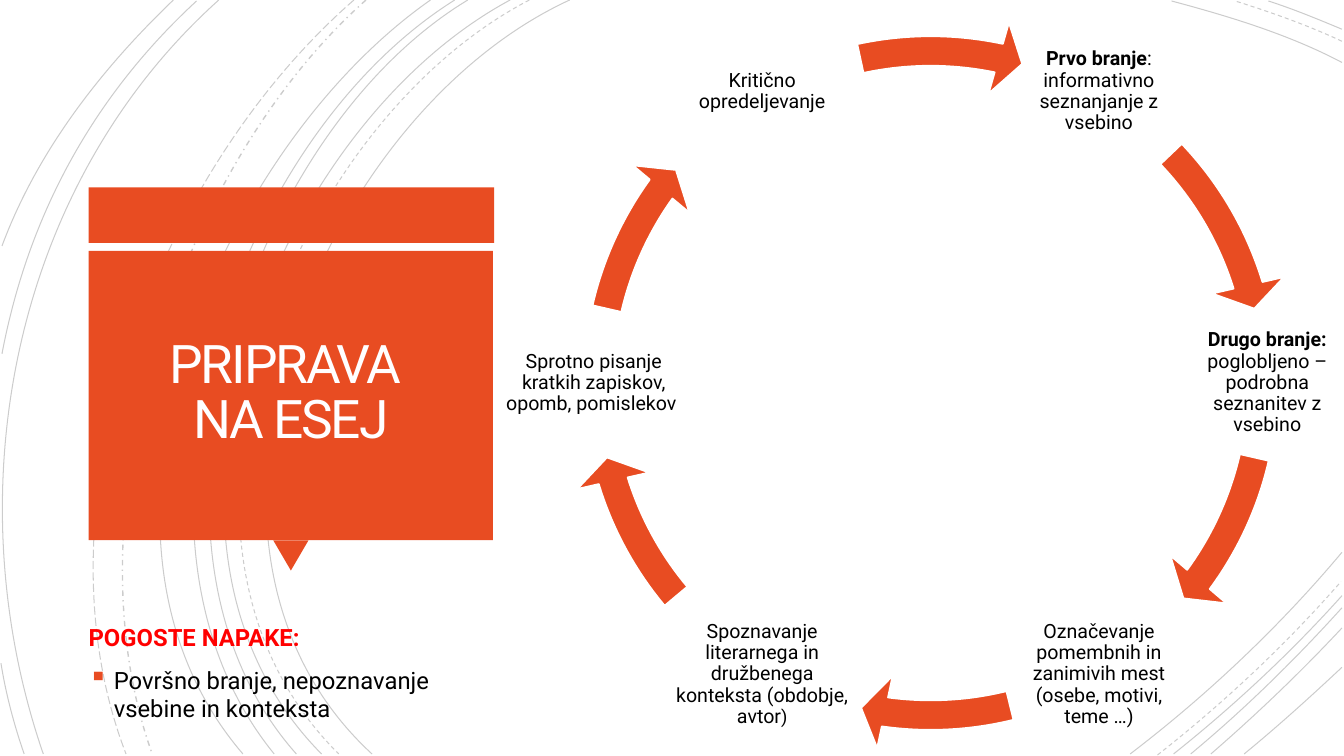
import math
from dataclasses import dataclass

from lxml import etree
from pptx import Presentation
from pptx import util as u
from pptx.dml.color import RGBColor
from pptx.enum import dml, shapes, text
from pptx.oxml import ns


@dataclass(frozen=True)
class Theme:
    font: str = "Roboto"
    accent: RGBColor = RGBColor(0xE8, 0x4C, 0x22)
    ink: RGBColor = RGBColor(0, 0, 0)
    paper: RGBColor = RGBColor(0xFF, 0xFF, 0xFF)
    title: RGBColor = RGBColor(0xFF, 0xFE, 0xFF)
    alert: RGBColor = RGBColor(0xFF, 0, 0)
    title_size: float = 38
    note_size: float = 17
    step_size: float = 14
    bracket_size: float = 13


@dataclass(frozen=True)
class Arc:
    """A cubic curve: start, two controls, end, in inches."""
    points: tuple
    dash: str = "SOLID"
    width: float = 0.75


@dataclass(frozen=True)
class Span:
    words: str
    size: float
    color: RGBColor
    bold: bool = False


@dataclass(frozen=True)
class Step:
    """A label on the ring; the arrow after it runs between two angles."""
    spans: tuple
    width: float
    arrow_start: float
    arrow_end: float


THEME = Theme()
RING_X, RING_Y, RING_RADIUS, ARROW_BOX = 9.23, 3.8, 3.34, 7.32
STEP_HEIGHT = 1.5

ARCS = [
    Arc(((5.65, 0), (3.15, 1.15), (1.43, 5.4), (3.69, 7.48))),
    Arc(((13.31, 0.62), (12.78, 0.34), (12.18, 0.16), (11.62, 0.01))),
    Arc(((11.21, 7.48), (11.97, 6.9), (12.69, 6.22), (13.31, 5.48))),
    Arc(((5.25, 0), (2.85, 1.25), (1.23, 5.37), (3.36, 7.48)), "DASH"),
    Arc(((13.31, 0.41), (12.97, 0.25), (12.6, 0.12), (12.25, 0.01)), "DASH"),
    Arc(((11.48, 7.49), (12.13, 6.98), (12.75, 6.4), (13.3, 5.77)), "DASH"),
    Arc(((5.06, 0), (2.7, 1.27), (1.1, 5.37), (3.19, 7.48))),
    Arc(((13.31, 0.29), (13.07, 0.19), (12.83, 0.09), (12.58, 0.01))),
    Arc(((11.64, 7.48), (12.23, 7.01), (12.8, 6.48), (13.31, 5.91))),
    Arc(((4.64, 0), (2.44, 1.33), (1.1, 5.41), (2.94, 7.48))),
    Arc(((11.81, 7.48), (12.34, 7.04), (12.84, 6.55), (13.31, 6.03))),
    Arc(((4.51, 0), (2.31, 1.38), (0.97, 5.33), (2.72, 7.48))),
    Arc(((12.01, 7.48), (12.46, 7.09), (12.9, 6.67), (13.31, 6.23))),
    Arc(((4.27, 0), (2.17, 1.47), (0.53, 5.29), (2.41, 7.48))),
    Arc(((12.34, 7.48), (12.67, 7.21), (12.99, 6.92), (13.31, 6.62))),
    Arc(((3.63, 0), (1.76, 1.66), (0.65, 5.09), (1.51, 7.48)), "DASH_DOT", 1),
    Arc(((3.51, 0), (1.57, 1.69), (0.29, 4.99), (1.25, 7.48)), "LONG_DASH"),
    Arc(((2.17, 0), (0.11, 1.85), (-0.46, 4.9), (0.43, 7.48))),
    Arc(((1.95, 0.01), (0.92, 0.96), (0.28, 2.14), (0.02, 3.51))),
    Arc(((0.01, 6.58), (0.06, 6.89), (0.14, 7.19), (0.24, 7.48))),
    Arc(((1.72, 0), (1, 0.69), (0.37, 1.5), (0.02, 2.44))),
]


def step_span(words: str, bold: bool = False, size: float = THEME.step_size) -> Span:
    return Span(words, size, THEME.ink, bold)


STEPS = [
    Step((step_span("Prvo branje", True),
          step_span(": informativno seznanjanje z vsebino")), 1.5, 316.39, 342.88),
    Step((step_span("Drugo branje: ", True),
          step_span("poglobljeno – podrobna seznanitev z vsebino")), 1.5, 12.95, 36.26),
    Step((step_span("Označevanje pomembnih in zanimivih mest (osebe, motivi, teme …)"),),
         1.75, 76.18, 97.91),
    Step((step_span("Spoznavanje literarnega in družbenega konteksta (obdobje, avtor"),
          step_span(")", size=THEME.bracket_size)), 1.94, 140.06, 162.88),
    Step((step_span("Sprotno pisanje kratkih zapiskov, opomb, pomislekov "),),
         1.97, 192.95, 215.76),
    Step((step_span("Kritično opredeljevanje"),), 1.93, 257.79, 281.84),
]


def apply(target, values: dict) -> None:
    for name, value in values.items():
        setattr(target, name, value)


def add_arc(page, arc: Arc) -> None:
    start, *rest = [(u.Inches(x), u.Inches(y)) for x, y in arc.points]
    builder = page.shapes.build_freeform(*start)
    builder.add_line_segments(rest, close=False)
    curve = builder.convert_to_shape()
    curve.shadow.inherit = False
    curve.fill.background()
    curve.line.color.rgb = THEME.ink
    apply(curve.line, {"width": u.Pt(arc.width),
                       "dash_style": getattr(dml.MSO_LINE, arc.dash)})
    color = curve.line._ln.find(".//" + ns.qn("a:srgbClr"))
    etree.SubElement(color, ns.qn("a:alpha"), val="20000")
    # The three straight segments become one cubic segment.
    outline = curve._element.find(".//" + ns.qn("a:path"))
    cubic = etree.SubElement(outline, ns.qn("a:cubicBezTo"))
    for segment in outline.findall(ns.qn("a:lnTo")):
        cubic.append(segment[0])
        outline.remove(segment)


def add_accent_shape(page, kind, left: float, top: float, width: float, height: float):
    shape = page.shapes.add_shape(kind, *map(u.Inches, (left, top, width, height)))
    shape.shadow.inherit = False
    shape.fill.solid()
    shape.fill.fore_color.rgb = THEME.accent
    shape.line.fill.background()
    return shape


def add_box(page, left: float, top: float, width: float, height: float,
            inset: float, anchor=text.MSO_ANCHOR.MIDDLE):
    box = page.shapes.add_textbox(*map(u.Inches, (left, top, width, height)))
    frame = box.text_frame
    apply(frame, {"word_wrap": True, "vertical_anchor": anchor})
    apply(frame, {f"margin_{side}": u.Inches(inset)
                  for side in ("left", "top", "right", "bottom")})
    return frame


def write(para, spans: tuple, **layout) -> None:
    apply(para, layout)
    for span in spans:
        run = para.add_run()
        run.text = span.words
        apply(run.font, {"name": THEME.font, "size": u.Pt(span.size), "bold": span.bold})
        run.font.color.rgb = span.color


def add_title(page) -> None:
    rect = shapes.MSO_SHAPE.RECTANGLE
    add_accent_shape(page, rect, 0.88, 1.86, 4.02, 0.55)
    pointer = add_accent_shape(page, shapes.MSO_SHAPE.ISOSCELES_TRIANGLE,
                               2.71, 5.36, 0.35, 0.3)
    pointer.rotation = 180
    add_accent_shape(page, rect, 0.88, 2.49, 4.01, 2.87)
    para = add_box(page, 0.97, 2.57, 3.83, 2.69, 0.25).paragraphs[0]
    first, second = (Span(words, THEME.title_size, THEME.title)
                     for words in ("PRIPRAVA ", "NA ESEJ"))
    write(para, (first,), alignment=text.PP_ALIGN.CENTER, line_spacing=0.85)
    para.add_line_break()
    write(para, (second,))
    for run in para.runs:
        run.font._element.set("spc", "-150")


def add_step(page, step: Step, angle: float) -> None:
    center_x = RING_X + RING_RADIUS * math.cos(math.radians(angle))
    center_y = RING_Y + RING_RADIUS * math.sin(math.radians(angle))
    frame = add_box(page, center_x - step.width / 2, center_y - STEP_HEIGHT / 2,
                    step.width, STEP_HEIGHT, 0.02)
    write(frame.paragraphs[0], step.spans,
          alignment=text.PP_ALIGN.CENTER, line_spacing=0.9)
    arrow = add_accent_shape(page, shapes.MSO_SHAPE.CIRCULAR_ARROW,
                             RING_X - ARROW_BOX / 2, RING_Y - ARROW_BOX / 2,
                             ARROW_BOX, ARROW_BOX)
    arrow.line.color.rgb = THEME.paper
    arrow.line.width = u.Pt(1.25)
    # Angle adjustments count 0.6 per degree.
    values = (0.04, 2.5, step.arrow_end * 0.6, step.arrow_start * 0.6, 0.05)
    for index, value in enumerate(values):
        arrow.adjustments[index] = value


def add_mistakes(page) -> None:
    frame = add_box(page, 0.78, 6.13, 4.22, 1.1, 0.05, text.MSO_ANCHOR.TOP)
    frame.margin_left = frame.margin_right = u.Inches(0.1)
    write(frame.paragraphs[0],
          (Span("POGOSTE NAPAKE:", THEME.note_size, THEME.alert, True),))
    item = frame.add_paragraph()
    props = item._p.get_or_add_pPr()
    apply_indent = {"marL": u.Inches(0.25), "indent": -u.Inches(0.25)}
    for name, length in apply_indent.items():
        props.set(name, str(int(length)))
    bullet_color = etree.SubElement(props, ns.qn("a:buClr"))
    etree.SubElement(bullet_color, ns.qn("a:srgbClr"), val=str(THEME.accent))
    etree.SubElement(props, ns.qn("a:buSzPct"), val="110000")
    etree.SubElement(props, ns.qn("a:buChar"), char="▪")
    write(item, (Span("Površno branje, nepoznavanje vsebine in konteksta",
                      THEME.note_size, THEME.ink),), space_before=u.Pt(10))


def main() -> None:
    deck = Presentation()
    apply(deck, {"slide_width": u.Inches(13.33), "slide_height": u.Inches(7.5)})
    page = deck.slides.add_slide(deck.slide_layouts[6])
    for arc in ARCS:
        add_arc(page, arc)
    add_title(page)
    for index, step in enumerate(STEPS):
        add_step(page, step, -60 + 360 / len(STEPS) * index)
    add_mistakes(page)
    deck.save("out.pptx")


if __name__ == "__main__":
    main()
